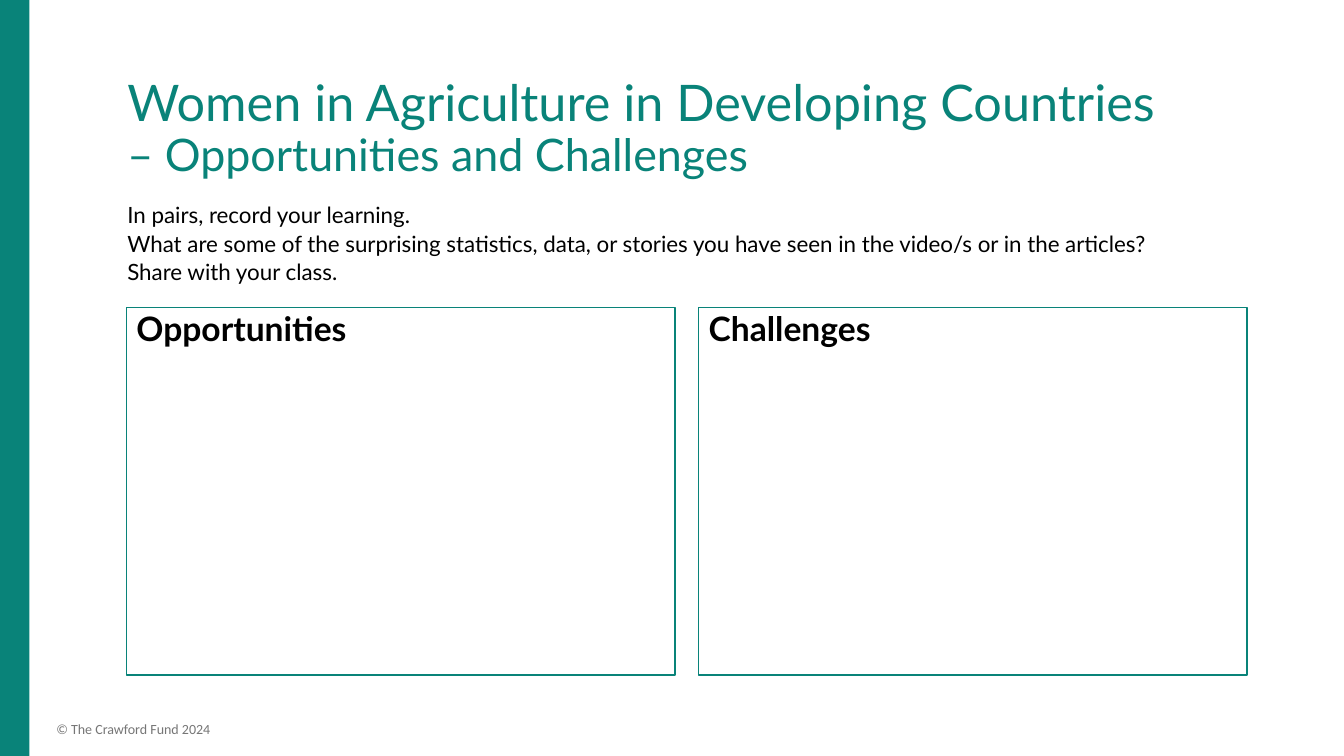
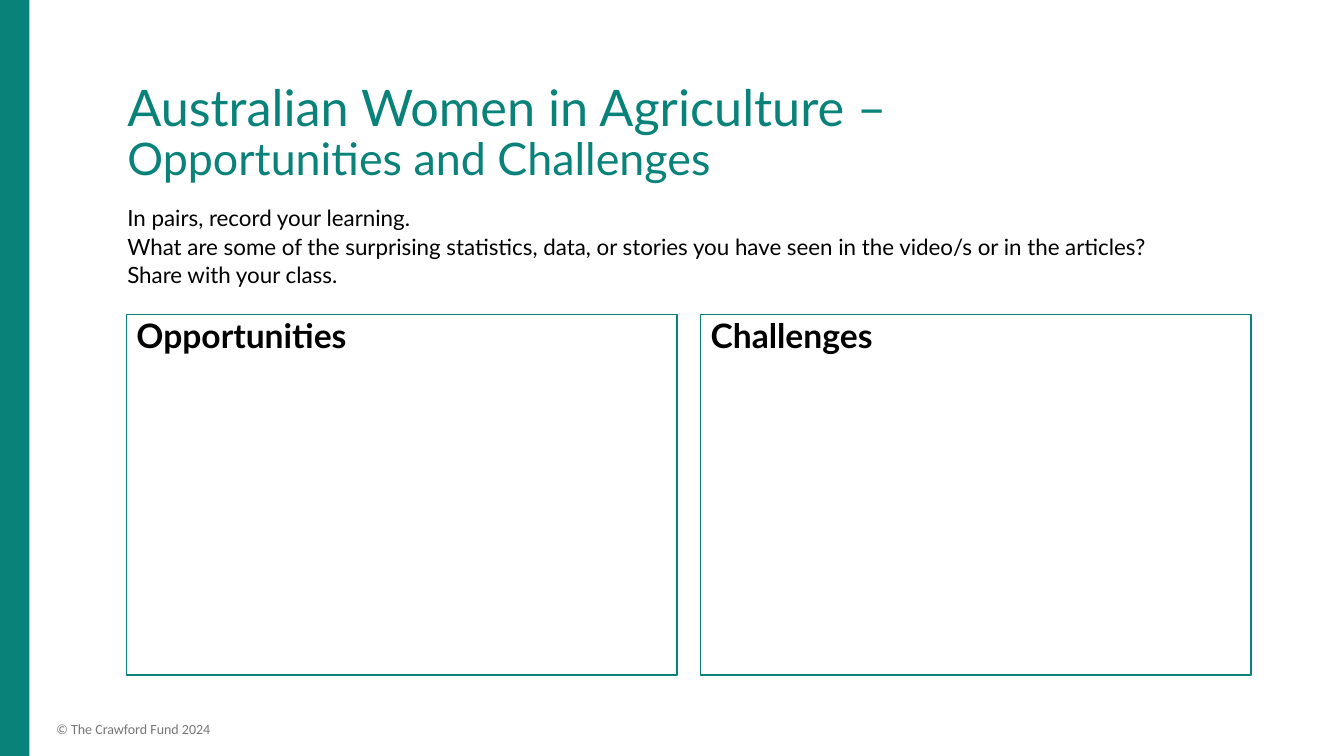
from pptx import Presentation
from pptx.dml.color import RGBColor
from pptx.enum.shapes import MSO_SHAPE as Shape
from pptx.enum.text import MSO_ANCHOR as Anchor, PP_ALIGN as Align
from pptx.util import Cm, Pt

PROMPT = [
    "In pairs, record your learning.",
    "What are some of the surprising statistics, data, or stories you have seen "
    "in the video/s or in the articles?",
    "Share with your class.",
]
HEADINGS = ["Opportunities", "Challenges"]


def color(value):
    return RGBColor.from_string(value)


class Worksheet:
    GREEN, BLACK, GREY = "098379", "000000", "767676"
    FONT, FOOTER_FONT = "Lato", "Calibri"
    WIDTH, HEIGHT = 33.87, 19.05
    TEXT_LEFT, TEXT_WIDTH = 2.96, 28.56
    PANEL_LEFT, PANEL_GAP, PANEL_BOTTOM = 3.19, 0.6, 17.01

    def __init__(self):
        self.deck = Presentation()
        self.deck.slide_width = Cm(self.WIDTH)
        self.deck.slide_height = Cm(self.HEIGHT)
        self.slide = None

    def new_slide(self):
        self.slide = self.deck.slides.add_slide(self.deck.slide_layouts[6])
        self.rectangle(0, 0, 0.74, self.HEIGHT, fill=self.GREEN)
        footer = self.text_box(1.17, 18.03, 17.4, 0.69, ["© The Crawford Fund 2024"])
        self.style(footer.paragraphs[0].runs[0], 10, self.GREY, self.FOOTER_FONT)

    def style(self, span, size, ink, font=FONT, bold=False):
        span.font.name = font
        span.font.size = Pt(size)
        span.font.bold = bold
        span.font.color.rgb = color(ink)

    def rectangle(self, left, top, width, height, fill=None, line=None):
        box = self.slide.shapes.add_shape(
            Shape.RECTANGLE, Cm(left), Cm(top), Cm(width), Cm(height))
        box.shadow.inherit = False
        if fill:
            box.fill.solid()
            box.fill.fore_color.rgb = color(fill)
        else:
            box.fill.background()
        if line:
            box.line.color.rgb = color(line)
            box.line.width = Pt(1)
        else:
            box.line.fill.background()
        return box

    def text_box(self, left, top, width, height, lines):
        box = self.slide.shapes.add_textbox(Cm(left), Cm(top), Cm(width), Cm(height))
        frame = box.text_frame
        frame.word_wrap = True
        frame.text = "\n".join(lines)
        return frame

    def title(self, first, second, bottom):
        top = 2.03
        frame = self.text_box(self.TEXT_LEFT, top, self.TEXT_WIDTH, bottom - top,
                              [f"{first}\v{second}"])
        frame.vertical_anchor = Anchor.BOTTOM
        para = frame.paragraphs[0]
        para.line_spacing = 0.9
        for span, size in zip(para.runs, (36, 32)):
            self.style(span, size, self.GREEN)

    def prompt(self, lines, top):
        frame = self.text_box(self.TEXT_LEFT, top, self.TEXT_WIDTH, 2.4, lines)
        for index, para in enumerate(frame.paragraphs):
            para.line_spacing = 0.9
            para.space_before = Pt(3 if index else 0)
            self.style(para.runs[0], 16, self.BLACK)

    def panels(self, headings, top, width):
        for index, heading in enumerate(headings):
            left = self.PANEL_LEFT + index * (width + self.PANEL_GAP)
            box = self.rectangle(left, top, width, self.PANEL_BOTTOM - top,
                                 line=self.GREEN)
            frame = box.text_frame
            frame.word_wrap = True
            frame.vertical_anchor = Anchor.TOP
            frame.text = heading
            para = frame.paragraphs[0]
            para.alignment = Align.LEFT
            para.line_spacing = 0.9
            self.style(para.runs[0], 24, self.BLACK, bold=True)


def main():
    sheet = Worksheet()

    sheet.new_slide()
    sheet.title("Women in Agriculture in Developing Countries",
                "– Opportunities and Challenges", bottom=4.68)
    sheet.prompt(PROMPT, top=5.03)
    sheet.panels(HEADINGS, top=7.75, width=13.82)

    sheet.new_slide()
    sheet.title("Australian Women in Agriculture –",
                "Opportunities and Challenges", bottom=4.8)
    sheet.prompt(PROMPT, top=5.1)
    sheet.panels(HEADINGS, top=7.92, width=13.87)

    sheet.deck.save("out.pptx")


if __name__ == "__main__":
    main()
